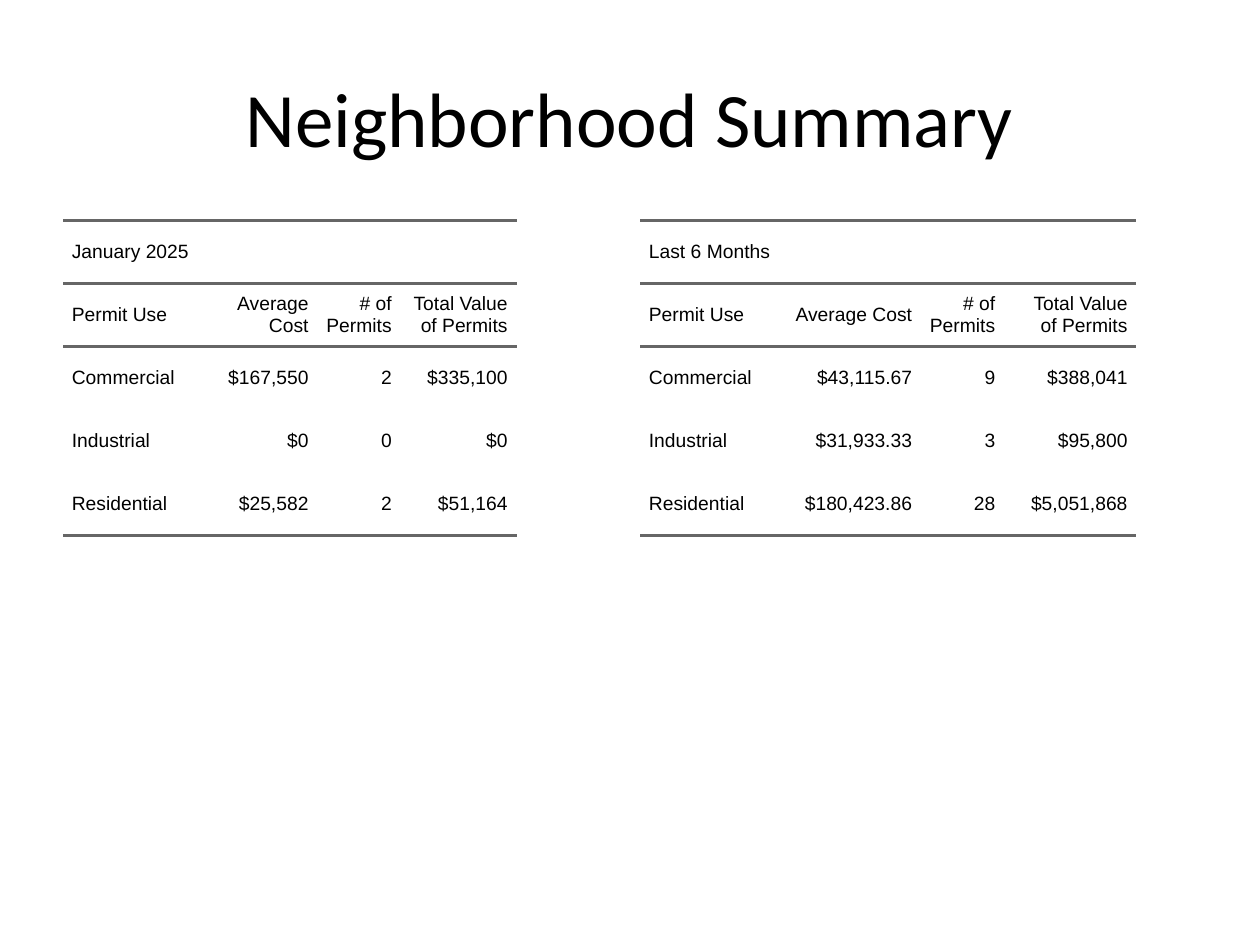
from lxml.etree import SubElement
from pptx import Presentation
from pptx.dml.color import RGBColor
from pptx.enum.text import MSO_ANCHOR, PP_ALIGN
from pptx.oxml.ns import qn
from pptx.util import Inches, Pt

TITLE = "Neighborhood Summary"
HEADINGS = ("Permit Use", "Average Cost", "# of Permits", "Total Value of Permits")
PERIODS = [
    {
        "name": "January 2025",
        "left": 0.5,
        "columns": (1.1, 0.92, 0.66, 0.92),
        "permits": [
            ("Commercial", "$167,550", "2", "$335,100"),
            ("Industrial", "$0", "0", "$0"),
            ("Residential", "$25,582", "2", "$51,164"),
        ],
    },
    {
        "name": "Last 6 Months",
        "left": 5.08,
        "columns": (1.1, 1.13, 0.66, 1.05),
        "permits": [
            ("Commercial", "$43,115.67", "9", "$388,041"),
            ("Industrial", "$31,933.33", "3", "$95,800"),
            ("Residential", "$180,423.86", "28", "$5,051,868"),
        ],
    },
]
THEME = {
    "title_font": "Calibri",
    "title_size": Pt(44),
    "table_font": "Arial",
    "table_size": Pt(11),
    "text": RGBColor(0, 0, 0),
    "rule": "666666",
    "rule_width": Pt(1.5),
    "padding": Inches(0.07),
    "spacing": Pt(5),
}
TABLE_TOP, ROW_HEIGHT = 1.75, 0.5


def style_font(font, part):
    font.name = THEME[f"{part}_font"]
    font.size = THEME[f"{part}_size"]
    font.color.rgb = THEME["text"]


def set_borders(cell, ruled_sides):
    """Rule the given sides (of L, R, T, B) and clear the others."""
    properties = cell._tc.get_or_add_tcPr()
    for side in "LRTB":
        border = SubElement(properties, qn(f"a:ln{side}"), w=str(THEME["rule_width"]))
        if side in ruled_sides:
            fill = SubElement(border, qn("a:solidFill"))
            SubElement(fill, qn("a:srgbClr"), val=THEME["rule"])
        else:
            SubElement(border, qn("a:noFill"))


def fill_cell(cell, wording, align):
    cell.vertical_anchor = MSO_ANCHOR.MIDDLE
    cell.margin_left = cell.margin_right = 0
    cell.margin_top = cell.margin_bottom = THEME["padding"]
    paragraph = cell.text_frame.paragraphs[0]
    paragraph.text = wording
    paragraph.alignment = align
    paragraph.space_before = paragraph.space_after = THEME["spacing"]
    indents = paragraph._p.get_or_add_pPr()
    for name, value in (("marL", THEME["padding"]), ("marR", THEME["padding"]), ("indent", 0)):
        indents.set(name, str(value))
    style_font(paragraph.font, "table")
    for run in paragraph.runs:
        style_font(run.font, "table")


def add_period(slide, period):
    rows = [(period["name"], "", "", ""), HEADINGS, *period["permits"]]
    columns = period["columns"]
    table = slide.shapes.add_table(
        len(rows), len(columns), Inches(period["left"]), Inches(TABLE_TOP),
        Inches(sum(columns)), Inches(ROW_HEIGHT * len(rows)),
    ).table
    table.first_row = table.horz_banding = False
    for column, width in zip(table.columns, columns):
        column.width = Inches(width)
    for r, row in enumerate(rows):
        table.rows[r].height = Inches(ROW_HEIGHT)
        # Rules frame the period and heading rows and close the table.
        ruled_sides = "TB" if r < 2 else "T" if r == 2 else "B" if r == len(rows) - 1 else ""
        for c, wording in enumerate(row):
            cell = table.cell(r, c)
            fill_cell(cell, wording, PP_ALIGN.RIGHT if c else PP_ALIGN.LEFT)
            set_borders(cell, ruled_sides)
            cell.fill.background()
    table.cell(0, 0).merge(table.cell(0, len(columns) - 1))


def main():
    deck = Presentation()
    deck.slide_width, deck.slide_height = Inches(10), Inches(7.5)
    slide = deck.slides.add_slide(deck.slide_layouts[5])

    title = slide.shapes.title
    title.left, title.top = Inches(0.5), Inches(0.3)
    title.width, title.height = Inches(9), Inches(1.25)
    title.text_frame.text = TITLE
    title.text_frame.vertical_anchor = MSO_ANCHOR.MIDDLE
    heading = title.text_frame.paragraphs[0]
    heading.alignment = PP_ALIGN.CENTER
    style_font(heading.runs[0].font, "title")

    for period in PERIODS:
        add_period(slide, period)
    deck.save("out.pptx")


if __name__ == "__main__":
    main()
